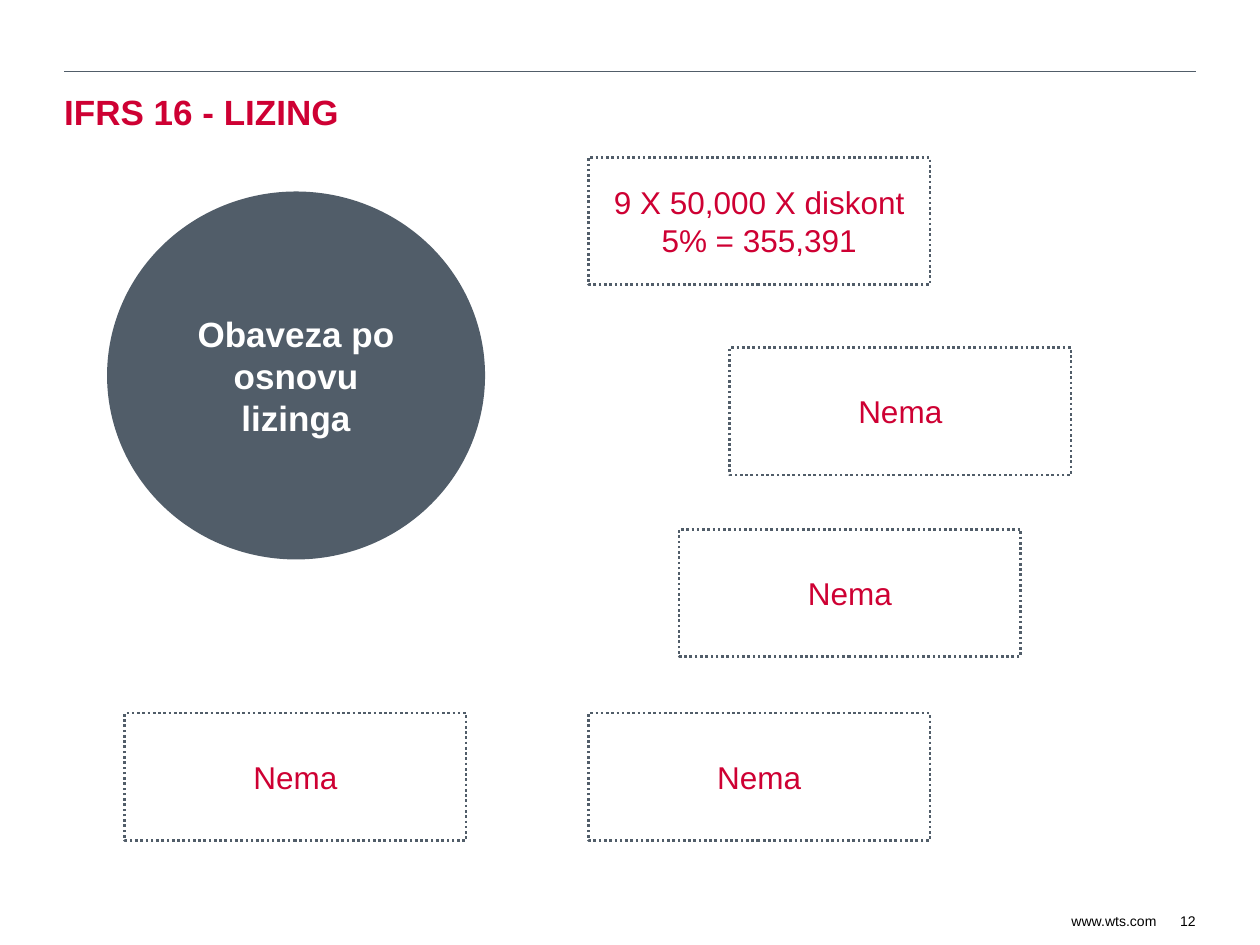
from lxml.etree import SubElement
from pptx import Presentation
from pptx.dml.color import RGBColor
from pptx.enum.dml import MSO_LINE
from pptx.enum.shapes import MSO_CONNECTOR, MSO_SHAPE
from pptx.enum.text import MSO_ANCHOR as Anchor, PP_ALIGN as Align
from pptx.oxml.ns import qn
from pptx.util import Inches, Pt

RED, SLATE, WHITE, BLACK = "CE0033", "515D69", "FFFFFF", "000000"
MARGIN, CONTENT_WIDTH = 0.51, 8.98

TITLE = "IFRS 16 - LIZING"
TOPIC = "Obaveza po osnovu lizinga"
BOX_WIDTH, BOX_HEIGHT = 2.71, 1.01
BOXES = [  # text, left, top
    ("9 X 50,000 X diskont 5% = 355,391", 4.67, 1.25),
    ("Nema", 5.79, 2.76),
    ("Nema", 5.39, 4.2),
    ("Nema", 4.67, 5.66),
    ("Nema", 0.99, 5.66),
]
FOOTER = [("12", 9.27, 0.22), ("www.wts.com", 8.49, 0.69)]  # text, left, width
FOOTER_TOP, FOOTER_HEIGHT = 7.24, 0.14


def color(value):
    return RGBColor.from_string(value)


def write(shape, text, size, ink, bold=False, align=Align.CENTER,
          anchor=Anchor.MIDDLE, inset=None, wrap=True):
    frame = shape.text_frame
    frame.word_wrap = wrap
    frame.vertical_anchor = anchor
    if inset is not None:
        frame.margin_left = frame.margin_right = Inches(inset)
        frame.margin_top = frame.margin_bottom = Inches(inset)
    paragraph = frame.paragraphs[0]
    paragraph.alignment = align
    run = paragraph.add_run()
    run.text = text
    run.font.name, run.font.size, run.font.bold = "Arial", Pt(size), bold
    run.font.color.rgb = color(ink)


def add_shape(slide, kind, *place):
    shape = slide.shapes.add_shape(kind, *map(Inches, place))
    shape.shadow.inherit = False
    return shape


def add_rule(slide, left, top, width):
    rule = slide.shapes.add_connector(
        MSO_CONNECTOR.STRAIGHT, *map(Inches, (left, top, left + width, top)))
    rule.line.color.rgb = color(SLATE)
    rule.line.width = Pt(0.75)
    SubElement(rule._element.spPr, qn("a:effectLst"))


def add_title(slide):
    title = slide.shapes.title
    title.left, title.top, title.width, title.height = map(
        Inches, (MARGIN, 0.72, CONTENT_WIDTH, 0.67))
    write(title, TITLE, 20, RED, bold=True, align=Align.LEFT,
          anchor=Anchor.TOP, inset=0)


def add_topic(slide):
    circle = add_shape(slide, MSO_SHAPE.OVAL, 0.85, 1.52, 3, 2.92)
    circle.fill.solid()
    circle.fill.fore_color.rgb = color(SLATE)
    circle.line.fill.background()
    write(circle, TOPIC, 20, WHITE, bold=True)


def add_box(slide, text, left, top):
    box = add_shape(slide, MSO_SHAPE.RECTANGLE, left, top, BOX_WIDTH, BOX_HEIGHT)
    box.fill.background()
    box.line.color.rgb = color(SLATE)
    box.line.width = Pt(1.5)
    box.line.dash_style = MSO_LINE.ROUND_DOT  # saved as sysDot
    write(box, text, 18, RED)


def main():
    presentation = Presentation()
    presentation.slide_width, presentation.slide_height = Inches(10), Inches(7.5)
    slide = presentation.slides.add_slide(presentation.slide_layouts[5])

    add_rule(slide, MARGIN, 0.57, CONTENT_WIDTH)
    add_title(slide)
    add_topic(slide)
    for box in BOXES:
        add_box(slide, *box)
    for text, left, width in FOOTER:
        footer = slide.shapes.add_textbox(
            *map(Inches, (left, FOOTER_TOP, width, FOOTER_HEIGHT)))
        write(footer, text, 8, BLACK, align=Align.RIGHT, inset=0, wrap=False)

    presentation.save("out.pptx")


if __name__ == "__main__":
    main()
